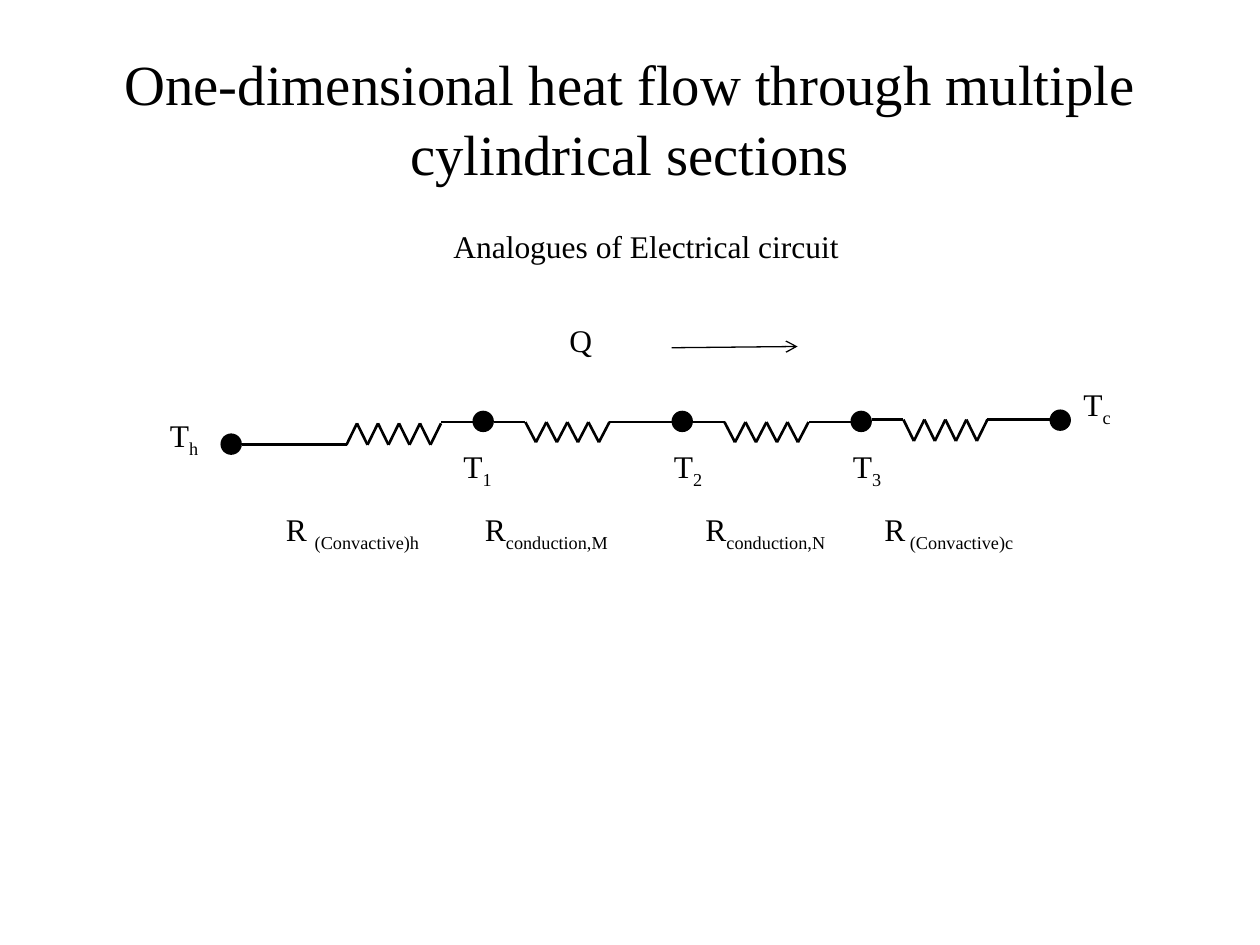
import pptx
import pptx.util
import pptx.dml.color
import pptx.enum.shapes
import pptx.enum.text
import pptx.oxml.ns
from lxml import etree

Inches, Pt = pptx.util.Inches, pptx.util.Pt
BLACK = pptx.dml.color.RGBColor(0, 0, 0)
FONT = "Times New Roman"
TITLE = "One-dimensional heat flow through multiple cylindrical sections"

# text, subscript, left, top, width, height
LABELS = [
    ("Analogues of Electrical circuit", "", 3.5, 1.75, 3.5, 0.4),
    ("Q", "", 4.42, 2.5, 0.75, 0.4),
    ("T", "h", 1.25, 3.25, 0.75, 0.4),
    ("T", "1", 3.58, 3.5, 0.75, 0.4),
    ("T", "2", 5.25, 3.5, 0.75, 0.4),
    ("T", "3", 6.67, 3.5, 0.75, 0.4),
    ("T", "c", 8.5, 3.01, 0.75, 0.4),
    ("R ", "(Convactive)h", 2.17, 4, 1.42, 0.71),
    ("R", "conduction,M", 3.75, 4, 1.42, 0.4),
    ("R", "conduction,N", 5.5, 4, 1.42, 0.4),
    ("R", " (Convactive)c", 6.92, 4, 1.42, 0.4),
]
# left, y of the first end, y of the other end, number of strokes
RESISTORS = [
    (2.75, 3.53, 3.36, 9),
    (4.17, 3.35, 3.51, 8),
    (5.75, 3.35, 3.51, 8),
    (7.17, 3.33, 3.5, 8),
]
STROKE_WIDTH = 1 / 12
# from x, to x, y
WIRES = [
    (1.92, 2.75, 3.53), (3.5, 3.75, 3.35), (3.92, 4.17, 3.35),
    (4.83, 5.42, 3.35), (5.5, 5.75, 3.35), (6.42, 6.75, 3.35),
    (6.92, 7.17, 3.33), (7.83, 8.42, 3.33),
]
NODES = [(1.75, 3.44), (3.75, 3.26), (5.33, 3.26), (6.75, 3.26), (8.33, 3.25)]
NODE_SIZE = 0.17
HEAT_FLOW = (5.33, 2.76, 6.33, 2.75)


def add_run(paragraph, text, size, subscript=False):
    run = paragraph.add_run()
    run.text = text
    for key, value in {"name": FONT, "size": Pt(size)}.items():
        setattr(run.font, key, value)
    run.font.color.rgb = BLACK
    if subscript:
        run._r.get_or_add_rPr().set("baseline", "-25000")


def add_line(slide, x1, y1, x2, y2, width=1.5, arrow=False):
    line = slide.shapes.add_connector(
        pptx.enum.shapes.MSO_CONNECTOR.STRAIGHT,
        Inches(x1), Inches(y1), Inches(x2), Inches(y2))
    line.line.color.rgb = BLACK
    line.line.width = Pt(width)
    qn = pptx.oxml.ns.qn
    if arrow:
        etree.SubElement(line.line._get_or_add_ln(), qn("a:tailEnd"), type="arrow")
    etree.SubElement(line._element.spPr, qn("a:effectLst"))


def add_title(slide):
    title = slide.shapes.title
    place = {"left": 0.5, "top": 0.3, "width": 9, "height": 1.25}
    for key, value in place.items():
        setattr(title, key, Inches(value))
    frame_format = {
        "word_wrap": True,
        "auto_size": pptx.enum.text.MSO_AUTO_SIZE.NONE,
        "vertical_anchor": pptx.enum.text.MSO_ANCHOR.MIDDLE,
    }
    for key, value in frame_format.items():
        setattr(title.text_frame, key, value)
    paragraph = title.text_frame.paragraphs[0]
    paragraph.alignment = pptx.enum.text.PP_ALIGN.CENTER
    paragraph.line_spacing = 1.04
    add_run(paragraph, TITLE, 32.4)


def add_label(slide, text, subscript, *place):
    label = slide.shapes.add_textbox(*map(Inches, place)).text_frame
    label.word_wrap = True
    add_run(label.paragraphs[0], text, 18)
    if subscript:
        add_run(label.paragraphs[0], subscript, 18, subscript=True)


def add_resistor(slide, left, first_y, other_y, strokes):
    """Draw a zigzag whose strokes alternate between the two heights."""
    ends = (first_y, other_y)
    for i in range(strokes):
        x = left + i * STROKE_WIDTH
        add_line(slide, x, ends[i % 2], x + STROKE_WIDTH, ends[(i + 1) % 2])


def add_node(slide, left, top):
    node = slide.shapes.add_shape(
        pptx.enum.shapes.MSO_SHAPE.OVAL,
        Inches(left), Inches(top), Inches(NODE_SIZE), Inches(NODE_SIZE))
    node.shadow.inherit = False
    node.fill.solid()
    node.fill.fore_color.rgb = BLACK
    node.line.fill.background()


def main():
    deck = pptx.Presentation()
    deck.slide_width, deck.slide_height = Inches(10), Inches(7.5)
    slide = deck.slides.add_slide(deck.slide_layouts[5])
    add_title(slide)
    for resistor in RESISTORS:
        add_resistor(slide, *resistor)
    for start, end, y in WIRES:
        add_line(slide, start, y, end, y)
    for node in NODES:
        add_node(slide, *node)
    add_line(slide, *HEAT_FLOW, width=0.75, arrow=True)
    for label in LABELS:
        add_label(slide, *label)
    deck.save("out.pptx")


if __name__ == "__main__":
    main()
